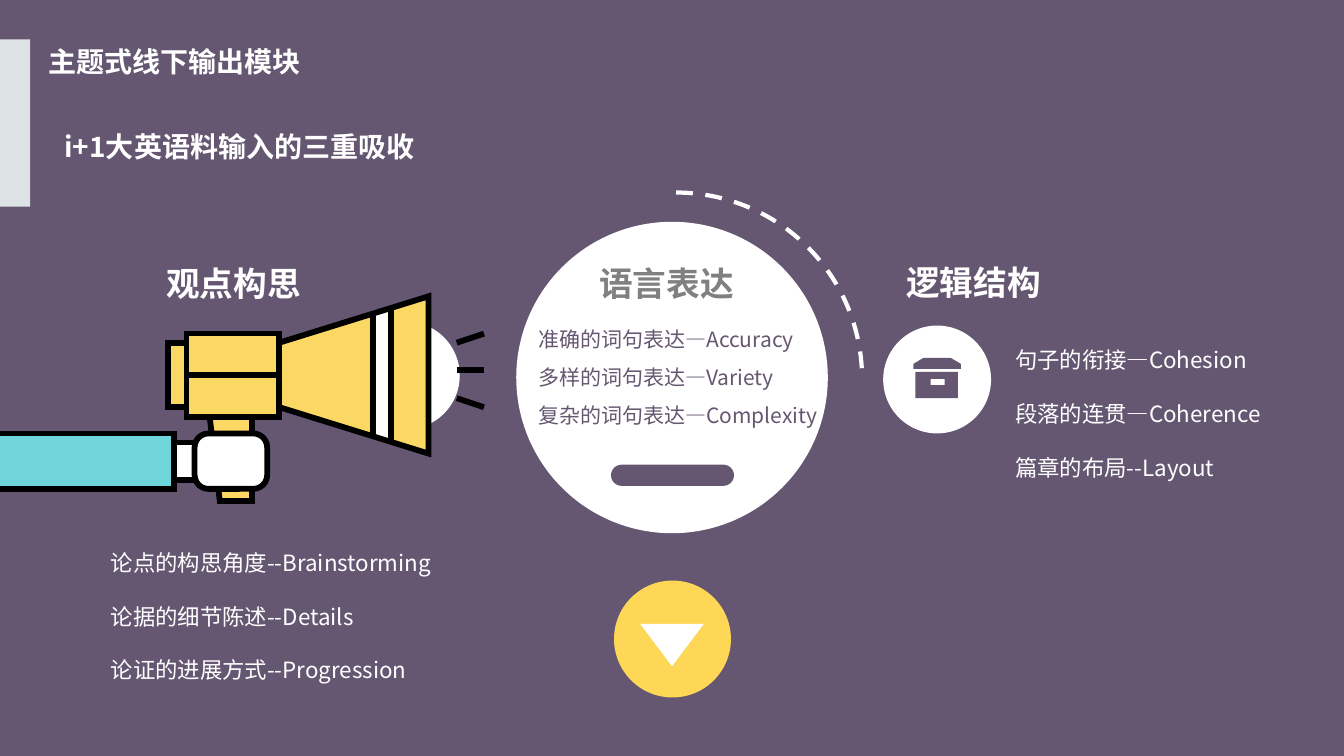
from lxml.etree import SubElement
from pptx import Presentation
from pptx.dml.color import RGBColor
from pptx.enum.dml import MSO_LINE_DASH_STYLE as Dash
from pptx.enum.shapes import MSO_CONNECTOR_TYPE as Connector, MSO_SHAPE as Shape
from pptx.enum.text import MSO_AUTO_SIZE as AutoSize, PP_ALIGN as Align
from pptx.oxml.ns import qn
from pptx.util import Inches, Pt

PURPLE, WHITE, BLACK, GREY = "655771", "FFFFFF", "000000", "808080"
PALE, TEAL, GOLD, YELLOW = "DDE3E5", "70D5DA", "FBD764", "FED756"
STROKE = 4.13


def color(value):
    return RGBColor.from_string(value)


class SlidePainter:
    """Draws styled elements on the current slide."""

    font = "Noto Sans CJK SC"

    def __init__(self, page, background):
        self.page = page
        page.background.fill.solid()
        page.background.fill.fore_color.rgb = color(background)

    def outline(self, line, stroke, width, dash=None):
        line.color.rgb = color(stroke)
        line.width = Pt(width)
        if dash:
            line.dash_style = dash
        SubElement(line._get_or_add_ln(), qn("a:miter"), lim="800000")

    def paint(self, shape, fill, stroke, width=STROKE, dash=None):
        shape.shadow.inherit = False
        if fill:
            shape.fill.solid()
            shape.fill.fore_color.rgb = color(fill)
        else:
            shape.fill.background()
        if stroke:
            self.outline(shape.line, stroke, width, dash)
        else:
            shape.line.fill.background()
        return shape

    def shape(self, kind, place, fill=None, stroke=None, adjust=(), **style):
        shape = self.page.shapes.add_shape(kind, *map(Inches, place))
        for index, value in enumerate(adjust):
            shape.adjustments[index] = value
        return self.paint(shape, fill, stroke, **style)

    def outlines(self, contours, fill=None, stroke=None):
        contours = [[(Inches(x), Inches(y)) for x, y in points] for points in contours]
        builder = self.page.shapes.build_freeform(*contours[0][0])
        for index, points in enumerate(contours):
            if index:
                builder.move_to(*points[0])
            builder.add_line_segments(points[1:], close=bool(fill))
        return self.paint(builder.convert_to_shape(), fill, stroke)

    def line(self, start, end):
        ends = map(Inches, (*start, *end))
        line = self.page.shapes.add_connector(Connector.STRAIGHT, *ends)
        self.outline(line.line, BLACK, STROKE)
        SubElement(line._element.spPr, qn("a:effectLst"))

    def text(self, place, lines, size, ink=WHITE, bold=False, align=Align.LEFT,
             spacing=1.0, wrap=True):
        box = self.page.shapes.add_textbox(*map(Inches, place))
        frame = box.text_frame
        frame.word_wrap = wrap
        frame.auto_size = AutoSize.SHAPE_TO_FIT_TEXT
        frame.text = "\n".join(lines)
        for para in frame.paragraphs:
            para.alignment = align
            para.line_spacing = spacing
            para.font.name = self.font
            para.font.size = Pt(size)
            para.font.bold = bold
            para.font.color.rgb = color(ink)
            defaults = para._p.pPr.find(qn("a:defRPr"))
            SubElement(defaults, qn("a:ea"), typeface=self.font)

    def heading(self, place, words, ink=WHITE):
        self.text(place, [words], 24, ink, bold=True, align=Align.CENTER, wrap=False)


def draw_language(painter):
    painter.shape(Shape.OVAL, (5.12, 2.2, 3.09, 3.09), WHITE)
    painter.heading((5.83, 2.56, 1.56, 0.5), "语言表达", GREY)
    painter.text((5.24, 3.07, 3.14, 1.18),
                 ["准确的词句表达—Accuracy", "多样的词句表达—Variety", "复杂的词句表达—Complexity"],
                 15, PURPLE, spacing=1.5)
    painter.shape(Shape.ROUNDED_RECTANGLE, (6.06, 4.61, 1.22, 0.21), PURPLE, adjust=[0.5])


def draw_logic(painter):
    painter.text((9.97, 3.12, 2.77, 1.72),
                 ["句子的衔接—Cohesion", "段落的连贯—Coherence", "篇章的布局--Layout"],
                 16, spacing=2.0)
    painter.heading((8.88, 2.55, 1.55, 0.5), "逻辑结构")
    painter.shape(Shape.OVAL, (8.76, 3.23, 1.07, 1.07), WHITE)
    crate = [(9.08, 3.95), (9.5, 3.95), (9.5, 3.69), (9.08, 3.69)]
    handle = [(9.23, 3.76), (9.37, 3.76), (9.37, 3.82), (9.23, 3.82)]
    lid = [(9.43, 3.55), (9.16, 3.55), (9.06, 3.61), (9.06, 3.66), (9.53, 3.66), (9.53, 3.61)]
    painter.outlines([crate, handle], PURPLE)
    painter.outlines([lid], PURPLE)


def draw_megaphone(painter):
    painter.shape(Shape.OVAL, (3.49, 3.19, 1.07, 1.07), WHITE)
    horn_edges = [(2.77, 3.4, 4.04), (3.7, 3.11, 4.33), (3.88, 3.05, 4.39), (4.25, 2.94, 4.5)]
    for near, far, fill in zip(horn_edges, horn_edges[1:], (GOLD, WHITE, GOLD)):
        (left, top, bottom), (right, far_top, far_bottom) = near, far
        painter.outlines([[(left, top), (left, bottom), (right, far_bottom), (right, far_top)]],
                         fill)
    for top in (3.72, 3.31):
        painter.shape(Shape.RECTANGLE, (1.85, top, 0.92, 0.41), GOLD)
    grip = [(2.5, 4.14), (2.5, 4.97), (2.18, 4.97), (2.08, 4.14)]
    back = [(1.85, 3.4), (1.67, 3.4), (1.67, 4.04), (1.85, 4.04)]
    horn = [(2.77, 4.04), (4.25, 4.5), (4.25, 2.94), (2.77, 3.4)]
    wrist = [(1.73, 4.76), (2.28, 4.76), (2.28, 4.39), (1.73, 4.39)]
    sleeve = [(0, 4.85), (1.73, 4.85), (1.73, 4.3), (0, 4.3)]
    for part in (grip, back):
        painter.outlines([part], GOLD)
    painter.shape(Shape.RECTANGLE, (0, 4.3, 1.73, 0.55), TEAL)
    painter.outlines([horn], stroke=BLACK)
    painter.shape(Shape.RECTANGLE, (1.85, 3.31, 0.92, 0.83), stroke=BLACK)
    for part in (grip, back):
        painter.outlines([part], stroke=BLACK)
    painter.line((1.85, 3.72), (2.77, 3.72))
    for x, top, bottom in horn_edges[1:3]:
        painter.line((x, top), (x, bottom))
    for start, end in ((3.67, 3.67), (3.4, 3.31), (3.95, 4.04)):
        painter.line((4.53, start), (4.8, end))
    painter.shape(Shape.RECTANGLE, (1.73, 4.39, 0.55, 0.37), WHITE)
    painter.outlines([wrist], stroke=BLACK)
    painter.shape(Shape.ROUNDED_RECTANGLE, (1.93, 4.3, 0.72, 0.55), WHITE, BLACK, [0.25])
    painter.outlines([sleeve], stroke=BLACK)


def main():
    deck = Presentation()
    deck.slide_width, deck.slide_height = Inches(13.33), Inches(7.5)
    painter = SlidePainter(deck.slides.add_slide(deck.slide_layouts[6]), PURPLE)
    draw_language(painter)
    draw_logic(painter)
    painter.shape(Shape.RECTANGLE, (0, 0.39, 0.3, 1.66), PALE)
    painter.text((0.38, 0.39, 2.73, 0.44), ["主题式线下输出模块"], 20, bold=True, wrap=False)
    painter.shape(Shape.OVAL, (6.09, 5.76, 1.16, 1.16), YELLOW)
    pointer = painter.shape(Shape.ISOSCELES_TRIANGLE, (6.35, 6.19, 0.63, 0.42), WHITE)
    pointer.rotation = 180
    draw_megaphone(painter)
    painter.heading((1.54, 2.56, 1.55, 0.5), "观点构思")
    painter.text((1, 5.13, 3.48, 1.72),
                 ["论点的构思角度--Brainstorming", "论据的细节陈述--Details", "论证的进展方式--Progression"],
                 16, spacing=2.0)
    painter.shape(Shape.ARC, (4.86, 1.91, 3.69, 3.69), stroke=WHITE, adjust=[162, 0.18],
                  width=3, dash=Dash.DASH)
    painter.text((0.54, 0.9, 3.73, 0.77), ["i+1大英语料输入的三重吸收"], 20, bold=True, spacing=2.0)
    deck.save("out.pptx")


if __name__ == "__main__":
    main()
